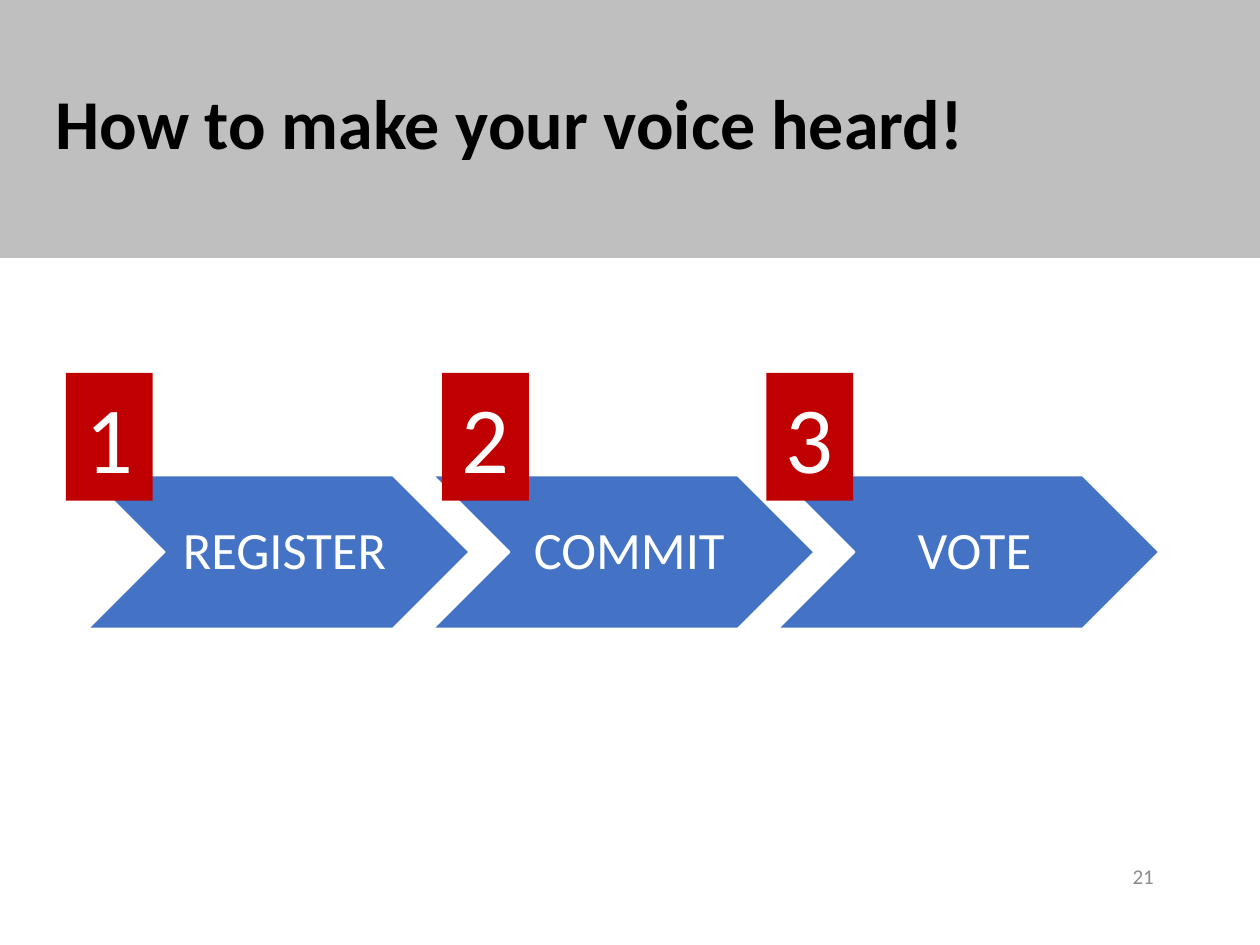
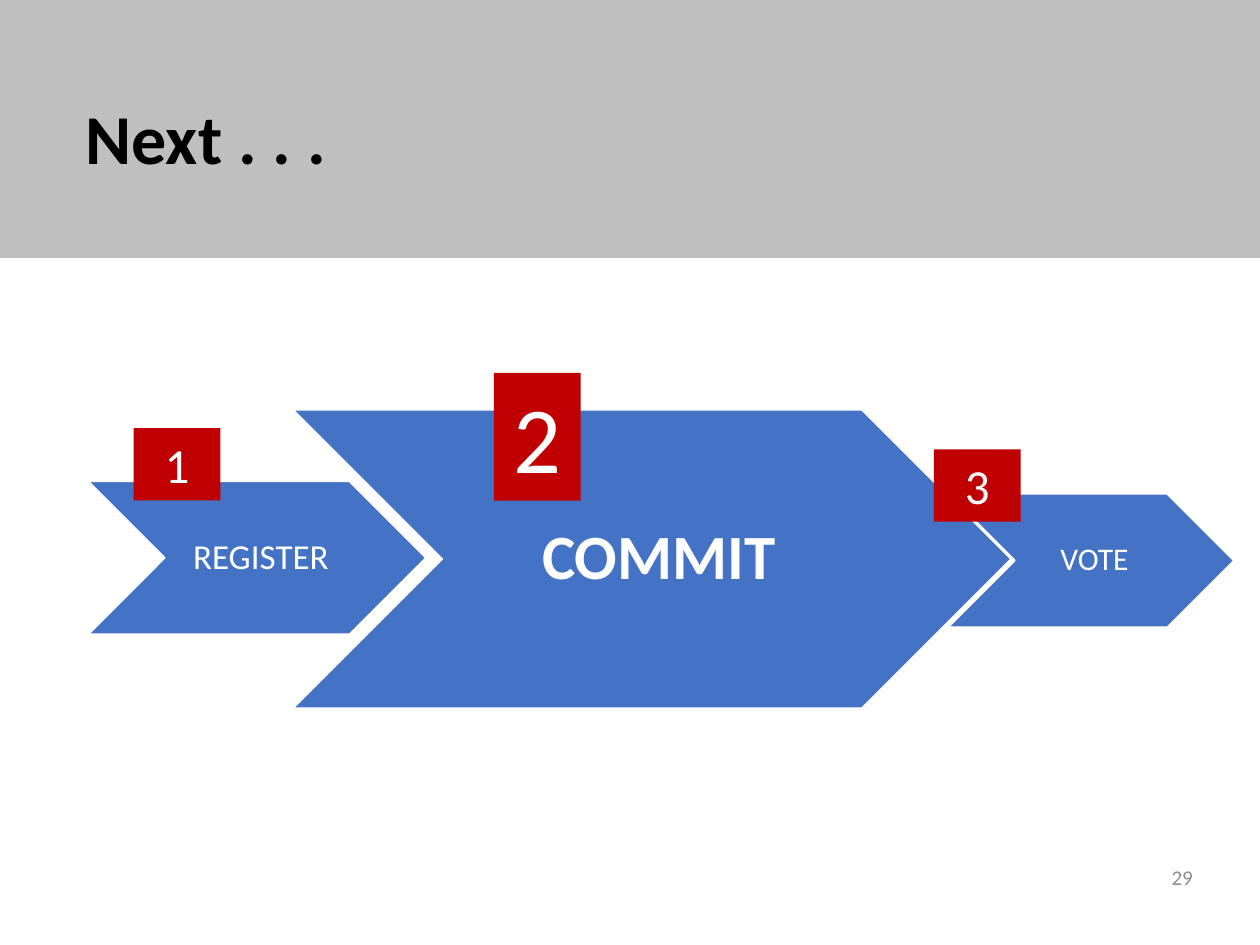
from pptx import Presentation
from pptx.dml.color import RGBColor
from pptx.enum.shapes import MSO_SHAPE
from pptx.enum.text import MSO_ANCHOR, MSO_AUTO_SIZE, PP_ALIGN
from pptx.util import Pt

RECT, CHEVRON = MSO_SHAPE.RECTANGLE, MSO_SHAPE.CHEVRON
TOP, MIDDLE = MSO_ANCHOR.TOP, MSO_ANCHOR.MIDDLE
LEFT, CENTER, RIGHT = PP_ALIGN.LEFT, PP_ALIGN.CENTER, PP_ALIGN.RIGHT
FIXED = MSO_AUTO_SIZE.NONE

GRAY, BLUE, RED = "BFBFBF", "4472C4", "C00000"
WHITE, BLACK, DIM = "FFFFFF", "000000", "8C8C8C"
WIDE, HIGH = 720, 540


def color(code):
    return RGBColor.from_string(code)


def assign(target, values):
    for name, value in values.items():
        setattr(target, name, value)


def place(shape, box):
    assign(shape, dict(zip(("left", "top", "width", "height"), map(Pt, box))))


class Deck:
    font = "Calibri"

    def __init__(self):
        self.file = Presentation()
        self.file.slide_width, self.file.slide_height = Pt(WIDE), Pt(HIGH)
        self.slide = None

    def start(self, title, box):
        layout = self.file.slide_layouts[5]
        self.slide = self.file.slides.add_slide(layout)
        band = self.shape(RECT, (0, 0, WIDE, 147.4), GRAY)
        self.slide.shapes.element.insert(2, band.element)
        head = self.slide.shapes.title
        place(head, box)
        self.label(head, title, 40, BLACK, LEFT, bold=True, spacing=0.9)

    def shape(self, kind, box, fill, line=None):
        item = self.slide.shapes.add_shape(kind, *map(Pt, box))
        item.shadow.inherit = False
        item.fill.solid()
        item.fill.fore_color.rgb = color(fill)
        if line:
            item.line.color.rgb = color(line)
            item.line.width = Pt(1)
        else:
            item.line.fill.background()
        return item

    def label(self, item, text, size, ink, align, anchor=MIDDLE,
              bold=False, spacing=1.0, inset=(7.2, 3.6, 7.2, 3.6), wrap=True):
        frame = item.text_frame
        frame.text = text
        assign(frame, {"auto_size": FIXED, "word_wrap": wrap,
                       "vertical_anchor": anchor})
        sides = ("margin_left", "margin_top", "margin_right", "margin_bottom")
        assign(frame, dict(zip(sides, map(Pt, inset))))
        line = frame.paragraphs[0]
        assign(line, {"alignment": align, "line_spacing": spacing})
        assign(line.font, {"name": self.font, "size": Pt(size), "bold": bold})
        line.font.color.rgb = color(ink)

    def step(self, text, box, size, bold=False):
        item = self.shape(CHEVRON, box, BLUE, WHITE)
        edge = size * 0.1
        self.label(item, text, size, WHITE, CENTER, bold=bold, spacing=0.9,
                   inset=(size * 0.32, edge, edge, edge), wrap=False)

    def badge(self, number, left, top, size):
        height = size * 1.22 + 7.2
        item = self.shape(RECT, (left, top, 49.7, height), RED)
        self.label(item, str(number), size, WHITE, CENTER, anchor=TOP)

    def page(self, number, left, top):
        item = self.slide.shapes.add_textbox(*map(Pt, (left, top, 243, 28.8)))
        self.label(item, str(number), 12, DIM, RIGHT)


def voice(deck):
    deck.start("How to make your voice heard!", (24.5, 20.2, 695.5, 104.4))
    for index, text in enumerate(("REGISTER", "COMMIT", "VOTE")):
        deck.step(text, (50.4 + index * 197.1, 271.7, 217.8, 87.5), 30)
    for number, left in enumerate((37.6, 252.6, 437.9), 1):
        deck.badge(number, left, 213.1, 54)
    deck.page(21, 423.4, 486.2)


def ahead(deck):
    deck.start("Next . . .", (41.8, 28.8, 318.2, 104.4))
    deck.step("REGISTER", (50.4, 275, 193, 87.5), 20)
    deck.step("COMMIT", (167.4, 234.2, 410.4, 170.6), 36, bold=True)
    deck.step("VOTE", (541.8, 282.2, 163.4, 76.3), 18)
    spots = ((76.3, 244.6, 28), (282.2, 213.1, 54), (533.6, 256.8, 28))
    for number, spot in enumerate(spots, 1):
        deck.badge(number, *spot)
    deck.page(29, 445.7, 486.7)


def main():
    deck = Deck()
    voice(deck)
    ahead(deck)
    deck.file.save("out.pptx")


if __name__ == "__main__":
    main()
